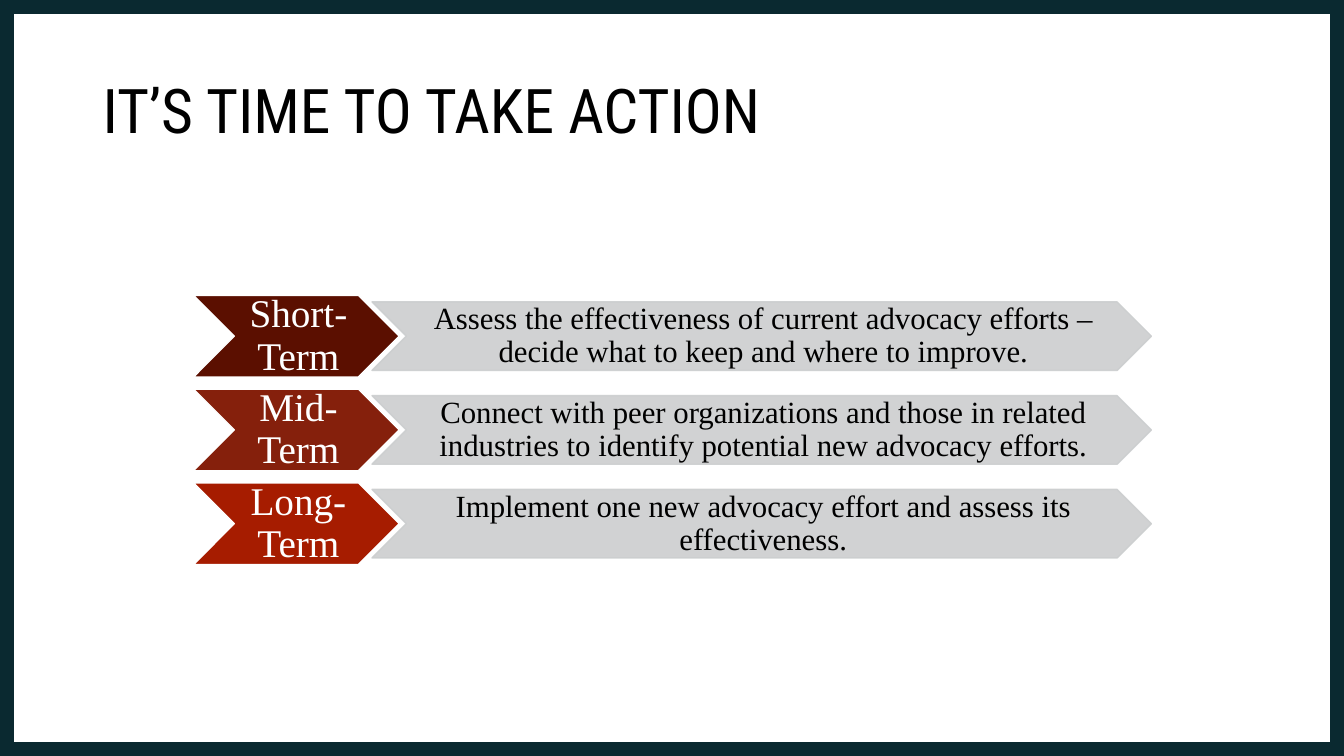
from lxml.etree import SubElement
from pptx import Presentation
from pptx.dml.color import RGBColor
from pptx.enum.shapes import MSO_SHAPE
from pptx.enum.text import MSO_ANCHOR, PP_ALIGN
from pptx.oxml.ns import qn
from pptx.util import Inches, Pt

# Content
TITLE = "IT’S TIME TO TAKE ACTION"
STEPS = [
    ("Short-Term", "5B0F00",
     "Assess the effectiveness of current advocacy efforts – "
     "decide what to keep and where to improve."),
    ("Mid-Term", "85200C",
     "Connect with peer organizations and those in related "
     "industries to identify potential new advocacy efforts."),
    ("Long-Term", "A61C00",
     "Implement one new advocacy effort and assess its effectiveness."),
]

# Layout in inches
WIDTH, HEIGHT = 13.33, 7.5
FIRST_ROW, ROW_STEP = 2.93, 0.93
TERM_LEFT, TERM_WIDTH, TERM_HEIGHT = 1.92, 2.04, 0.81
ACTION_LEFT, ACTION_WIDTH, ACTION_HEIGHT = 3.69, 7.73, 0.68

# Style
BODY_FONT, TITLE_FONT = "Times New Roman", "Roboto Condensed"
BLACK, WHITE, GREY, FRAME = "000000", "FFFFFF", "CCCECF", "0A2930"


def color(value):
    return RGBColor.from_string(value)


def set_opacity(fill, percent):
    for tint in fill.iter(qn("a:srgbClr")):
        SubElement(tint, qn("a:alpha")).set("val", str(percent * 1000))


def add_text(page, text, area, font, size, tone, align, margins):
    box = page.shapes.add_textbox(*map(Inches, area))
    frame = box.text_frame
    frame.word_wrap = True
    frame.vertical_anchor = MSO_ANCHOR.MIDDLE
    (frame.margin_left, frame.margin_top,
     frame.margin_right, frame.margin_bottom) = map(Inches, margins)
    frame.text = text
    para = frame.paragraphs[0]
    para.alignment = align
    para.line_spacing = 0.9
    span = para.runs[0].font
    span.name, span.size = font, Pt(size)
    span.color.rgb = color(tone)


def add_chevron(page, area, fill, line, text, size, tone, left_margin, opacity=100):
    left, top, width, height = area
    chevron = page.shapes.add_shape(MSO_SHAPE.CHEVRON, *map(Inches, area))
    chevron.shadow.inherit = False
    chevron.fill.solid()
    chevron.fill.fore_color.rgb = color(fill)
    chevron.line.color.rgb = color(line)
    chevron.line.width = Pt(1)
    if opacity < 100:
        set_opacity(chevron.element.spPr, opacity)
    # The label sits between the notch and the point, each half the height deep
    inner = (left + height / 2, top, width - height, height)
    add_text(page, text, inner, BODY_FONT, size, tone, PP_ALIGN.CENTER,
             (left_margin, 0.02, 0, 0.02))


deck = Presentation()
deck.slide_width, deck.slide_height = Inches(WIDTH), Inches(HEIGHT)
page = deck.slides.add_slide(deck.slide_layouts[6])

# Slide frame
border = page.shapes.add_shape(MSO_SHAPE.RECTANGLE, 0, 0,
                               deck.slide_width, deck.slide_height)
border.shadow.inherit = False
border.fill.background()
border.line.color.rgb = color(FRAME)
border.line.width = Pt(20.25)

# Title
add_text(page, TITLE, (0.92, 0.4, 11.5, 1.45), TITLE_FONT, 44, BLACK,
         PP_ALIGN.LEFT, (0.1, 0.05, 0.1, 0.05))

# One row per step: term, then action
for row, (term, shade, action) in enumerate(STEPS):
    top = FIRST_ROW + row * ROW_STEP
    action_top = top + (TERM_HEIGHT - ACTION_HEIGHT) / 2
    add_chevron(page, (TERM_LEFT, top, TERM_WIDTH, TERM_HEIGHT),
                shade, WHITE, term, 28, WHITE, 0.04)
    add_chevron(page, (ACTION_LEFT, action_top, ACTION_WIDTH, ACTION_HEIGHT),
                GREY, GREY, action, 22, BLACK, 0.03, opacity=90)

deck.save("out.pptx")
